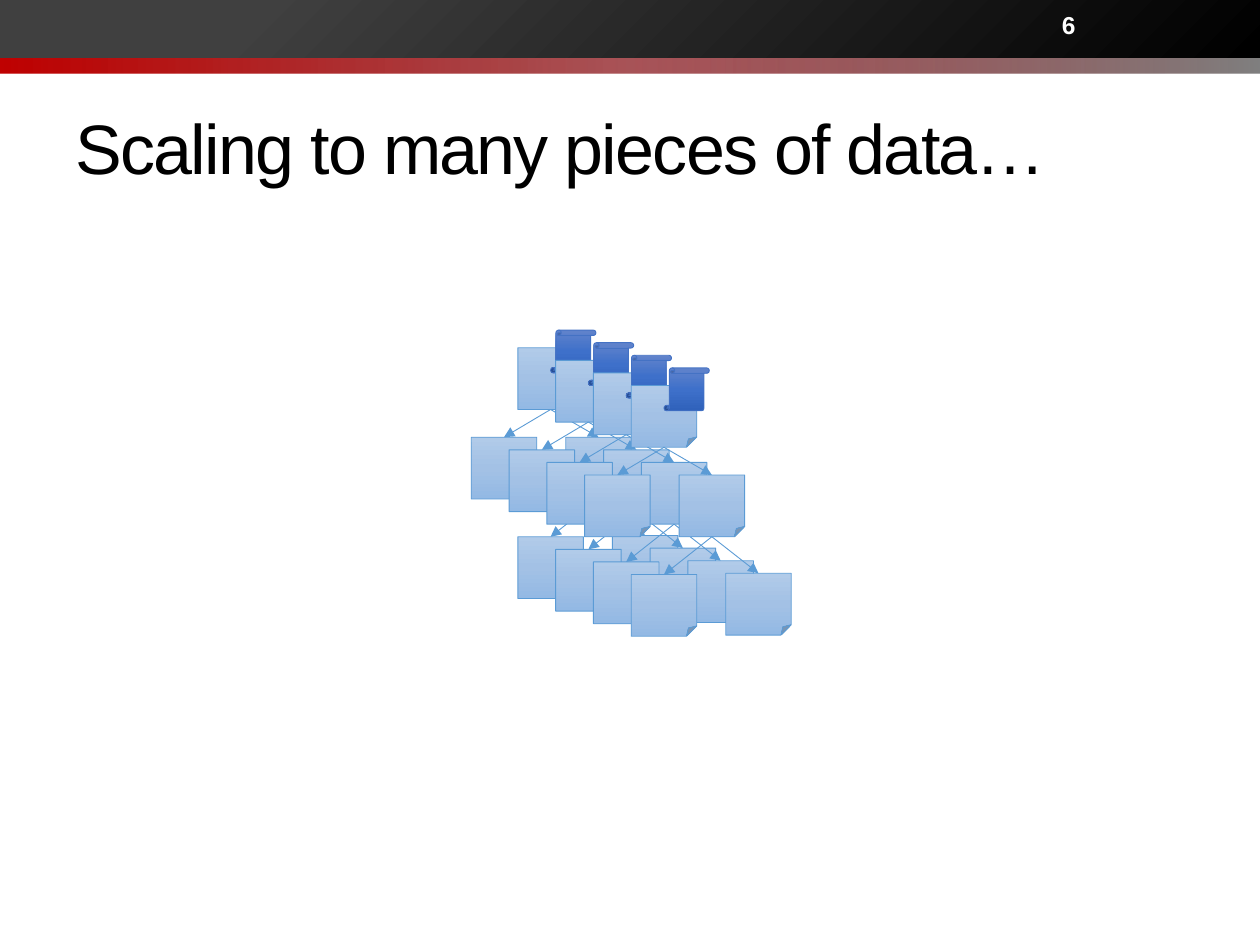
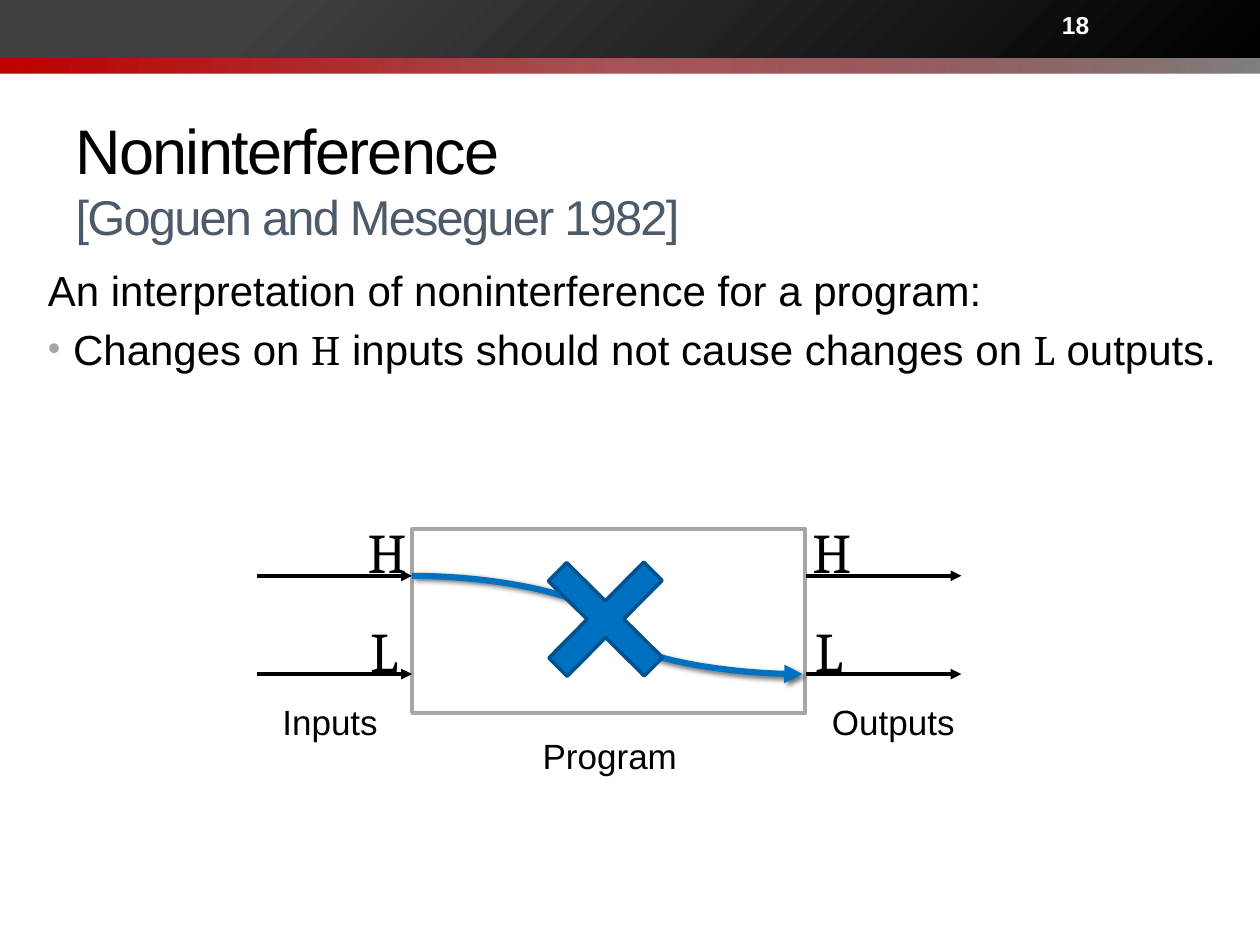
from pptx import Presentation
from pptx.dml.color import RGBColor
from pptx.enum.shapes import MSO_CONNECTOR as CONN, MSO_SHAPE as SHAPE
from pptx.enum.text import MSO_ANCHOR as ANCHOR, MSO_AUTO_SIZE as AUTO, PP_ALIGN as ALIGN
from pptx.oxml import parse_xml
from pptx.oxml.ns import nsdecls, qn
from pptx.util import Inches, Pt

BLACK = RGBColor(0x00, 0x00, 0x00)
WHITE = RGBColor(0xFF, 0xFF, 0xFF)
SLATE = RGBColor(0x4C, 0x5A, 0x6A)
GRAY = RGBColor(0xA6, 0xA6, 0xA6)
BLUE = RGBColor(0x00, 0x70, 0xC0)
DARK_BLUE = RGBColor(0x00, 0x53, 0x8E)
NOTE_LINE = RGBColor(0x5B, 0x9B, 0xD5)
SCROLL_LINE = RGBColor(0x44, 0x72, 0xC4)

# Gradient stops: position, colour, opacity (percent)
RED_BAND = [(0, "C00000", 100), (50, "7F0007", 67), (100, "808080", 100)]
DARK_BAND = [(0, "000000", 100), (80, "404040", 100), (100, "404040", 100)]
NOTE_FILL = [(0, "B1CBE9", 100), (50, "A3C1E5", 100), (100, "93B9E4", 100)]
SCROLL_FILL = [(0, "6183CB", 100), (50, "3E70CA", 100), (100, "3062BB", 100)]


def write(p, text, size=24, color=BLACK, font="Arial", bold=False, spacing=None, align=None):
    r = p.add_run()
    r.text = text
    r.font.size, r.font.name, r.font.bold = Pt(size), font, bold
    r.font.color.rgb = color
    if spacing is not None:
        r.font._element.set("spc", str(spacing * 100))
    if align is not None:
        p.alignment = align


def paint(shape, fill=None, angle=90, line=None, width=0.5, arrow=False, shadow=""):
    """Set fill (colour or gradient stops), line, arrowhead and shadow."""
    spPr = shape.element.spPr
    if isinstance(fill, list):
        stops = "".join(
            f'<a:gs pos="{pos * 1000}"><a:srgbClr val="{rgb}">'
            f'<a:alpha val="{alpha * 1000}"/></a:srgbClr></a:gs>' for pos, rgb, alpha in fill)
        spPr.find(qn("a:prstGeom")).addnext(parse_xml(
            f'<a:gradFill {nsdecls("a")} rotWithShape="1"><a:gsLst>{stops}</a:gsLst>'
            f'<a:lin ang="{angle * 60000}" scaled="0"/></a:gradFill>'))
    elif fill is not None:
        shape.fill.solid()
        shape.fill.fore_color.rgb = fill
    if line is None:
        shape.line.fill.background()
    else:
        shape.line.color.rgb = line
        shape.line.width = Pt(width)
    if arrow:
        spPr.find(qn("a:ln")).append(parse_xml(f'<a:tailEnd {nsdecls("a")} type="triangle"/>'))
    spPr.append(parse_xml(f'<a:effectLst {nsdecls("a")}>{shadow}</a:effectLst>'))


prs = Presentation()
prs.slide_width, prs.slide_height = Inches(10), Inches(7.5)
pieces = prs.slides.add_slide(prs.slide_layouts[5])
nonint = prs.slides.add_slide(prs.slide_layouts[1])

# Bands, moved to the master behind its placeholders
bands = [(0.24, 0.34, RED_BAND, 0), (0, 0.46, DARK_BAND, 225)]
for i, (top, height, stops, angle) in enumerate(bands):
    band = pieces.shapes.add_shape(SHAPE.RECTANGLE, 0, Inches(top), Inches(10), Inches(height))
    paint(band, stops, angle)
    prs.slide_master.shapes.element.insert(2 + i, band.element)

# Title frames and page numbers
for s, number, top in [(pieces, "6", 0.58), (nonint, "18", 0.83)]:
    title = s.shapes.title
    title.left, title.top = Inches(0.5), Inches(top)
    title.width, title.height = Inches(9), Inches(1.08)
    tf = title.text_frame
    tf.vertical_anchor, tf.auto_size = ANCHOR.MIDDLE, AUTO.NONE
    tf.margin_top = Inches(0.14)
    tf.paragraphs[0].alignment = ALIGN.LEFT
    tf = s.shapes.add_textbox(Inches(8.33), Inches(0.02), Inches(1.17), Inches(0.36)).text_frame
    tf.word_wrap, tf.vertical_anchor = True, ANCHOR.MIDDLE
    write(tf.paragraphs[0], number, size=14, color=WHITE, bold=True)

# Slide 1: four staggered trees of notes
write(pieces.shapes.title.text_frame.paragraphs[0], "Scaling to many pieces of data…",
      size=40, spacing=-1)

NOTE_W, NOTE_H = 0.52, 0.49
note_offsets = [(0, 0), (-0.37, 0.71), (0.38, 0.71), (0, 1.5), (0.75, 1.49)]
tree_links = [(0, 1), (0, 2), (2, 3), (2, 4)]
for i in range(4):
    x, y = 4.11 + 0.3 * i, 2.76 + 0.1 * i
    tree = pieces.shapes.add_group_shape().shapes
    for n, (dx, dy) in enumerate(note_offsets):
        note = tree.add_shape(SHAPE.FOLDED_CORNER, Inches(x + dx), Inches(y + dy),
                              Inches(NOTE_W), Inches(NOTE_H))
        paint(note, NOTE_FILL, line=NOTE_LINE)
        if n == 0:
            scroll = tree.add_shape(SHAPE.VERTICAL_SCROLL, Inches(x + 0.26), Inches(y - 0.14),
                                    Inches(0.36), Inches(0.34))
            paint(scroll, SCROLL_FILL, line=SCROLL_LINE)
    for parent, child in tree_links:
        (px, py), (cx, cy) = note_offsets[parent], note_offsets[child]
        link = tree.add_connector(CONN.STRAIGHT,
                                  Inches(x + px + NOTE_W / 2), Inches(y + py + NOTE_H),
                                  Inches(x + cx + NOTE_W / 2), Inches(y + cy))
        paint(link, line=NOTE_LINE, arrow=True)

# Slide 2: title and body
s = nonint
p = s.shapes.title.text_frame.paragraphs[0]
write(p, "Noninterference", size=36, spacing=-1)
p.add_line_break()
write(p, "[Goguen and Meseguer 1982]", size=27.9, color=SLATE, spacing=-1)

body = s.placeholders[1]
body.left, body.top, body.width, body.height = Inches(0.28), Inches(2.05), Inches(9.5), Inches(4.95)
tf = body.text_frame
tf.auto_size = AUTO.NONE
intro, claim = tf.paragraphs[0], tf.add_paragraph()
write(intro, "An interpretation of noninterference for a program:")
for text, font in [("Changes on ", "Arial"), ("H", "Cambria"),
                   (" inputs should not cause changes on ", "Arial"),
                   ("L", "Cambria"), (" outputs.", "Arial")]:
    write(claim, text, font=font)
bullet = ['<a:buClr {0}><a:srgbClr val="A5A5A5"/></a:buClr>', '<a:buSzPct {0} val="85000"/>',
          '<a:buFont {0} typeface="Arial"/>', '<a:buChar {0} char="•"/>']
for p, indent, marks in [(intro, 0, ["<a:buNone {0}/>"]), (claim, 0.2, bullet)]:
    p.space_before = Pt(4.8)
    pPr = p._p.get_or_add_pPr()
    pPr.set("marL", str(Inches(indent)))
    pPr.set("indent", str(-Inches(indent)))
    for mark in marks:
        pPr.append(parse_xml(mark.format(nsdecls("a"))))

# Program box with its input and output arrows
LEFT, RIGHT, HIGH, LOW = 3.27, 6.4, 4.57, 5.35
box = s.shapes.add_shape(SHAPE.RECTANGLE, Inches(LEFT), Inches(4.2), Inches(3.12), Inches(1.46))
paint(box, WHITE, line=GRAY, width=2.08)
for level, y, label_x in [("H", HIGH, (2.82, 6.35)), ("L", LOW, (2.84, 6.37))]:
    for start, x in zip((LEFT - 1.23, RIGHT), label_x):
        arrow = s.shapes.add_connector(CONN.STRAIGHT, Inches(start), Inches(y),
                                       Inches(start + 1.23), Inches(y))
        paint(arrow, line=BLACK, width=2.08, arrow=True)
        tf = s.shapes.add_textbox(Inches(x), Inches(y - 0.51), Inches(0.3), Inches(0.64)).text_frame
        tf.word_wrap = True
        write(tf.paragraphs[0], level, size=32, font="Cambria")

# Forbidden flow from H to L, crossed out
flow = s.shapes.add_connector(CONN.CURVE, Inches(LEFT), Inches(HIGH), Inches(6.37), Inches(LOW))
paint(flow, line=BLUE, width=3.5, arrow=True,
      shadow=f'<a:outerShdw blurRad="{Pt(3)}" dist="{Pt(2)}" dir="2700000">'
             '<a:srgbClr val="000000"><a:alpha val="60000"/></a:srgbClr></a:outerShdw>')
cross = s.shapes.add_shape(SHAPE.CROSS, Inches(4.27), Inches(4.38), Inches(1.07), Inches(1.07))
cross.rotation = 44.7
cross.adjustments[0] = 0.404
paint(cross, BLUE, line=DARK_BLUE, width=2.08)

# Captions
for text, x, y in [("Program", 3.48, 5.78), ("Inputs", 1.26, 5.51), ("Outputs", 5.73, 5.51)]:
    tf = s.shapes.add_textbox(Inches(x), Inches(y), Inches(2.72), Inches(0.44)).text_frame
    tf.word_wrap = True
    write(tf.paragraphs[0], text, size=20, align=ALIGN.CENTER)

prs.save("out.pptx")
